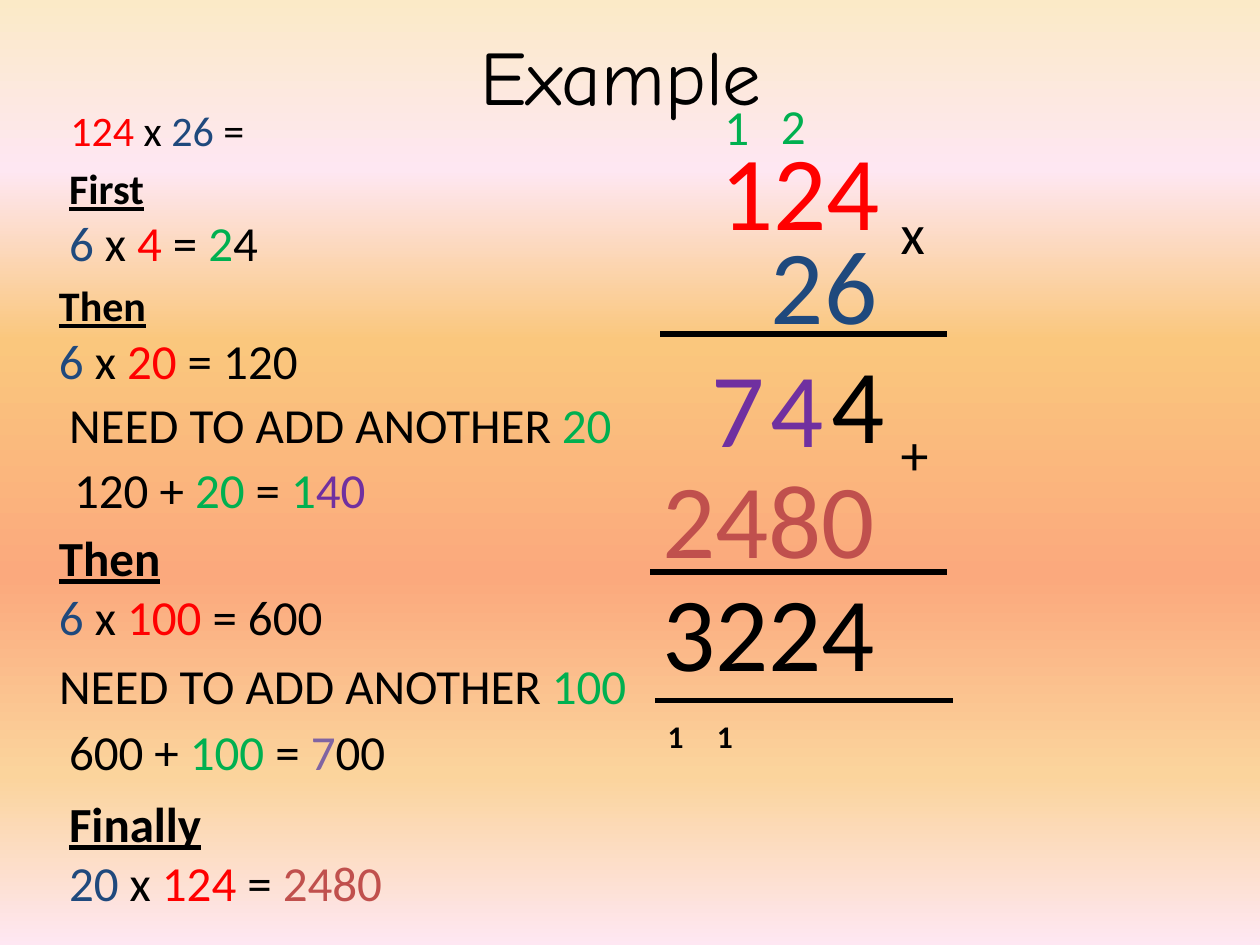
"""Build a worked example of long multiplication, 124 x 26."""
from lxml.etree import SubElement
from pptx import Presentation
from pptx.dml.color import RGBColor
from pptx.enum.shapes import MSO_CONNECTOR
from pptx.enum.text import MSO_ANCHOR, PP_ALIGN
from pptx.oxml.ns import qn
from pptx.util import Inches, Pt

BLACK = RGBColor(0x00, 0x00, 0x00)
RED = RGBColor(0xFF, 0x00, 0x00)
BLUE = RGBColor(0x1F, 0x49, 0x7D)
GREEN = RGBColor(0x00, 0xB0, 0x50)
PURPLE = RGBColor(0x70, 0x30, 0xA0)
VIOLET = RGBColor(0x80, 0x64, 0xA2)
BRICK = RGBColor(0xC0, 0x50, 0x4D)
STOPS = [
    (0, RGBColor(0xFB, 0xEA, 0xC7)),
    (18, RGBColor(0xFE, 0xE7, 0xF2)),
    (36, RGBColor(0xFA, 0xC7, 0x7D)),
    (61, RGBColor(0xFB, 0xA9, 0x7D)),
    (82, RGBColor(0xFB, 0xD4, 0x9C)),
    (100, RGBColor(0xFE, 0xE7, 0xF2)),
]

prs = Presentation()
prs.slide_width, prs.slide_height = Inches(10), Inches(7.5)
s = prs.slides.add_slide(prs.slide_layouts[6])

fill = s.background.fill
fill.gradient()
fill.gradient_angle = 270
stops = s.background._cSld.find(".//" + qn("a:gsLst"))
for old in list(stops):
    stops.remove(old)
for pos, color in STOPS:
    gs = SubElement(stops, qn("a:gs"), pos=str(pos * 1000))
    SubElement(gs, qn("a:srgbClr"), val=str(color))


def add_runs(p, runs, size, bold=False, underline=False, font="Calibri"):
    for text, color in runs:
        r = p.add_run()
        r.text = text
        r.font.name = font
        r.font.size = Pt(size)
        r.font.bold = bold
        r.font.underline = underline
        r.font.color.rgb = color


def add_box(left, top, width, height):
    sp = s.shapes.add_textbox(Inches(left), Inches(top), Inches(width), Inches(height))
    sp.text_frame.word_wrap = True
    return sp.text_frame


tf = add_box(0.43, -0.03, 9, 1.25)
tf.vertical_anchor = MSO_ANCHOR.MIDDLE
tf.paragraphs[0].alignment = PP_ALIGN.CENTER
add_runs(tf.paragraphs[0], [("Example", BLACK)], 44, font="Comic Neue")

steps = [
    (0.45, 1.24, 0.98, "First", 24,
     [("6", BLUE), (" x ", BLACK), ("4", RED), (" = ", BLACK), ("2", GREEN), ("4", BLACK)]),
    (0.37, 2.17, 0.98, "Then", 24,
     [("6", BLUE), (" x ", BLACK), ("20", RED), (" = 120", BLACK)]),
    (0.37, 4.14, 1.04, "Then", 28,
     [("6", BLUE), (" x ", BLACK), ("100 ", RED), ("= 600", BLACK)]),
    (0.45, 6.25, 1.04, "Finally", 28,
     [("20", BLUE), (" x ", BLACK), ("124 ", RED), ("= ", BLACK), ("2480", BRICK)]),
]
for left, top, height, heading, size, runs in steps:
    tf = add_box(left, top, 3.84, height)
    add_runs(tf.paragraphs[0], [(heading, BLACK)], size, bold=True, underline=True)
    add_runs(tf.add_paragraph(), runs, 28)

notes = [
    (0.46, 0.78, 2.31, 24, [("124", RED), (" x ", BLACK), ("26", BLUE), (" =", BLACK)]),
    (0.45, 3.08, 4.62, 28, [("NEED TO ADD ANOTHER ", BLACK), ("20", GREEN)]),
    (0.49, 3.6, 2.87, 28,
     [("120 + ", BLACK), ("20", GREEN), (" = ", BLACK), ("1", GREEN), ("40", PURPLE)]),
    (0.37, 5.15, 5.02, 28, [("NEED TO ADD ANOTHER ", BLACK), ("100", GREEN)]),
    (0.45, 5.68, 2.87, 28,
     [("600 + ", BLACK), ("100", GREEN), (" = ", BLACK), ("7", VIOLET), ("00", BLACK)]),
]
for left, top, width, size, runs in notes:
    tf = add_box(left, top, width, 0.57)
    add_runs(tf.paragraphs[0], runs, size)

digits = [
    (5.62, 0.95, 1.82, 60, "124", RED),
    (6.02, 1.69, 1.26, 60, "26", BLUE),
    (5.55, 2.67, 1.1, 60, "7", PURPLE),
    (6.02, 2.67, 1.1, 60, "4", PURPLE),
    (6.5, 2.64, 0.79, 60, "4", BLACK),
    (5.16, 3.55, 3.78, 60, "2480", BRICK),
    (5.16, 4.45, 2.2, 60, "3224", BLACK),
    (7.05, 1.53, 0.47, 32, "x", BLACK),
    (7.05, 3.28, 1.18, 32, "+", BLACK),
    (5.65, 0.72, 0.87, 28, "1", GREEN),
    (6.1, 0.71, 0.87, 28, "2", GREEN),
    (5.2, 5.64, 0.55, 18, "1", BLACK),
    (5.59, 5.64, 0.55, 18, "1", BLACK),
]
for left, top, width, size, text, color in digits:
    tf = add_box(left, top, width, 0.1 + size / 60)
    add_runs(tf.paragraphs[0], [(text, color)], size, bold=size == 18)

for x1, x2, y in [(5.24, 7.52, 2.65), (5.16, 7.52, 4.54), (5.2, 7.56, 5.56)]:
    rule = s.shapes.add_connector(
        MSO_CONNECTOR.STRAIGHT, Inches(x1), Inches(y), Inches(x2), Inches(y))
    rule.line.color.rgb = BLACK
    rule.line.width = Pt(3)
    SubElement(rule._element.spPr, qn("a:effectLst"))

prs.save("out.pptx")
